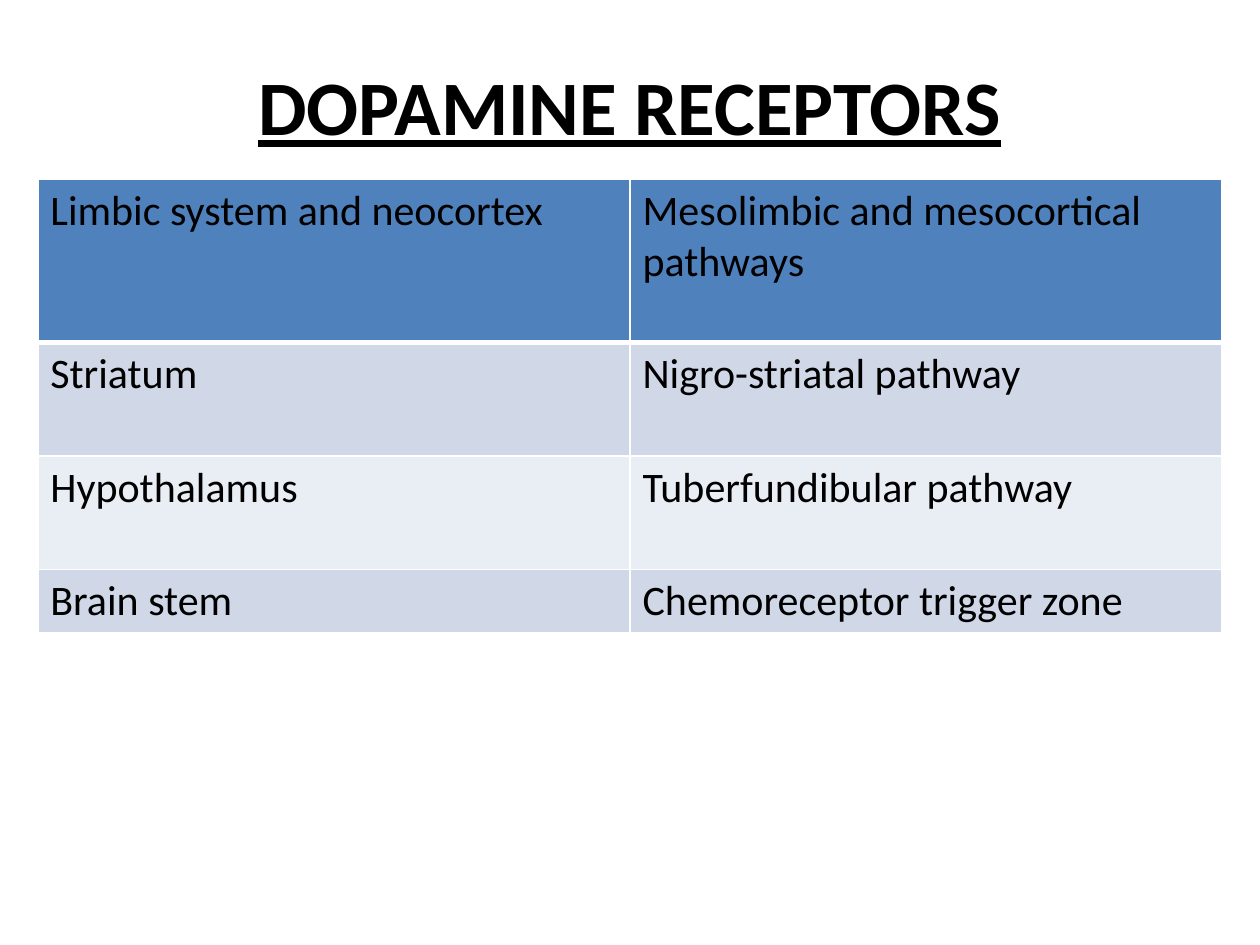
import pptx
import pptx.util
import pptx.dml.color
import pptx.enum.text
import pptx.oxml
import pptx.oxml.ns

COLS, ROWS = 100, 75
DECK = pptx.Presentation()
DECK.slide_width = pptx.util.Inches(10)
DECK.slide_height = pptx.util.Inches(7.5)

HEAD, ODD, EVEN = "4F81BD", "D0D8E8", "E9EDF4"
DATA = [
    (13, HEAD, "Limbic system and neocortex", "Mesolimbic and mesocortical pathways"),
    (9, ODD, "Striatum", "Nigro-striatal pathway"),
    (9, EVEN, "Hypothalamus", "Tuberfundibular pathway"),
    (5, ODD, "Brain stem", "Chemoreceptor trigger zone"),
]


def across(n):
    return round(DECK.slide_width * n / COLS)


def down(n):
    return round(DECK.slide_height * n / ROWS)


def place(box):
    left, top, wide, high = box
    return across(left), down(top), across(wide), down(high)


def color(code):
    return pptx.dml.color.RGBColor.from_string(code)


def style(para, size, bold=False, under=False):
    for run in para.runs:
        font = run.font
        font.name = "Calibri"
        font.size = pptx.util.Pt(size)
        font.bold = bold
        font.underline = under
        font.color.rgb = color("000000")


def border(cell, base):
    props = cell._tc.get_or_add_tcPr()
    for side, width in (("L", 1), ("R", 1), ("T", 1), ("B", base)):
        props.append(pptx.oxml.parse_xml(
            f'<a:ln{side} {pptx.oxml.ns.nsdecls("a")} w="{pptx.util.Pt(width)}">'
            f'<a:solidFill><a:srgbClr val="FFFFFF"/></a:solidFill></a:ln{side}>'
        ))


def title(slide, box):
    frame = slide.shapes.add_textbox(*place(box)).text_frame
    frame.word_wrap = True
    frame.vertical_anchor = pptx.enum.text.MSO_ANCHOR.MIDDLE
    frame.text = "DOPAMINE RECEPTORS"
    para = frame.paragraphs[0]
    para.alignment = pptx.enum.text.PP_ALIGN.CENTER
    style(para, 44, True, True)


def grid(slide, box):
    table = slide.shapes.add_table(len(DATA), 2, *place(box)).table
    for row, (high, fill, *words) in zip(table.rows, DATA):
        row.height = down(high)
        for cell, text in zip(row.cells, words):
            border(cell, 3 if fill == HEAD else 1)
            cell.fill.solid()
            cell.fill.fore_color.rgb = color(fill)
            cell.text_frame.text = text
            style(cell.text_frame.paragraphs[0], 24)


def main():
    slide = DECK.slides.add_slide(DECK.slide_layouts[6])
    title(slide, (3, 2.5, 94, 11.7))
    grid(slide, (3, 14.2, 94, sum(row[0] for row in DATA)))
    DECK.save("out.pptx")


if __name__ == "__main__":
    main()
